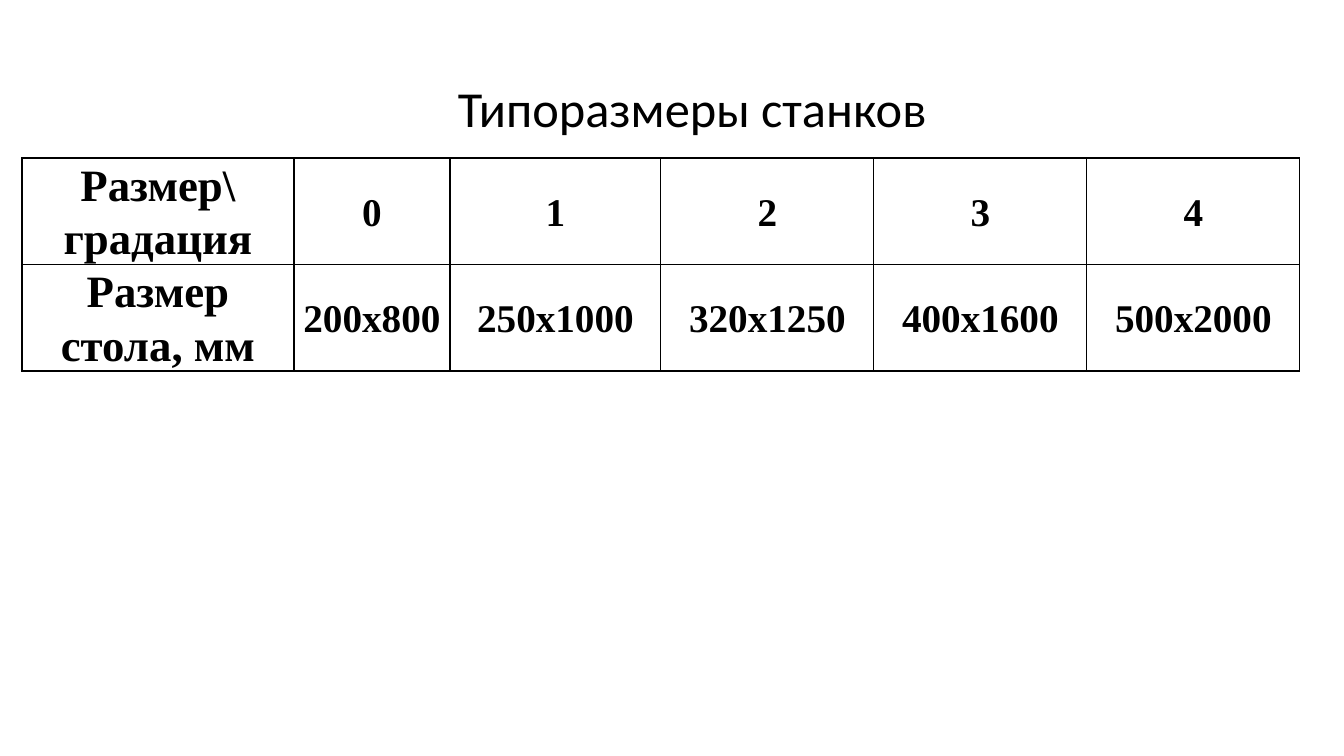
from lxml.etree import SubElement
from pptx import Presentation
from pptx.dml.color import RGBColor
from pptx.enum.text import MSO_ANCHOR, MSO_AUTO_SIZE, PP_ALIGN
from pptx.oxml.ns import qn
from pptx.util import Pt

EMU_PER_INCH = 914400
PX_PER_INCH = 100.8
BLACK = "000000"

COLUMN_WIDTHS = [272, 156, 211, 213, 213, 213]
ROW_HEIGHT = 106
SIZES = [
    ["Размер\\\nградация", "0", "1", "2", "3", "4"],
    ["Размер стола, мм", "200х800", "250х1000", "320х1250", "400х1600", "500х2000"],
]


def px(length):
    return round(length * EMU_PER_INCH / PX_PER_INCH)


def color(hex_code):
    return RGBColor.from_string(hex_code)


def set_font(paragraph, name, size, bold=False):
    font = paragraph.font
    font.name, font.size, font.bold = name, Pt(size), bold
    font.color.rgb = color(BLACK)


def add_borders(cell):
    properties = cell._tc.get_or_add_tcPr()
    for side in ("lnL", "lnR", "lnT", "lnB"):
        border = SubElement(properties, qn(f"a:{side}"), w=str(Pt(1)))
        fill = SubElement(border, qn("a:solidFill"))
        SubElement(fill, qn("a:srgbClr"), val=BLACK)


def fill_cell(cell, text, size):
    cell.text = text
    cell.vertical_anchor = MSO_ANCHOR.MIDDLE
    cell.margin_left = cell.margin_right = px(7)
    cell.margin_top = cell.margin_bottom = 0
    for paragraph in cell.text_frame.paragraphs:
        paragraph.alignment = PP_ALIGN.CENTER
        paragraph.line_spacing = 1.07
        set_font(paragraph, "Times New Roman", size, bold=True)
    add_borders(cell)
    cell.fill.background()


def add_size_table(slide, left, top):
    table = slide.shapes.add_table(
        len(SIZES), len(COLUMN_WIDTHS), px(left), px(top),
        px(sum(COLUMN_WIDTHS)), px(ROW_HEIGHT * len(SIZES))).table
    table.first_row = table.horz_banding = False
    for column, width in zip(table.columns, COLUMN_WIDTHS):
        column.width = px(width)
    for row_index, labels in enumerate(SIZES):
        table.rows[row_index].height = px(ROW_HEIGHT)
        for column_index, label in enumerate(labels):
            # Row headings are larger than the values
            size = 32 if column_index == 0 else 28
            fill_cell(table.cell(row_index, column_index), label, size)


def add_title(slide, text, left, top, width, height):
    frame = slide.shapes.add_textbox(px(left), px(top), px(width), px(height)).text_frame
    frame.word_wrap = True
    frame.auto_size = MSO_AUTO_SIZE.SHAPE_TO_FIT_TEXT
    frame.text = text
    set_font(frame.paragraphs[0], "Calibri", 36)


def main():
    presentation = Presentation()
    presentation.slide_width, presentation.slide_height = px(1344), px(756)
    slide = presentation.slides.add_slide(presentation.slide_layouts[6])

    # Machine sizes
    add_size_table(slide, 22, 158)

    # Heading above the table
    add_title(slide, "Типоразмеры станков", 448, 72, 540, 72)

    presentation.save("out.pptx")


if __name__ == "__main__":
    main()
